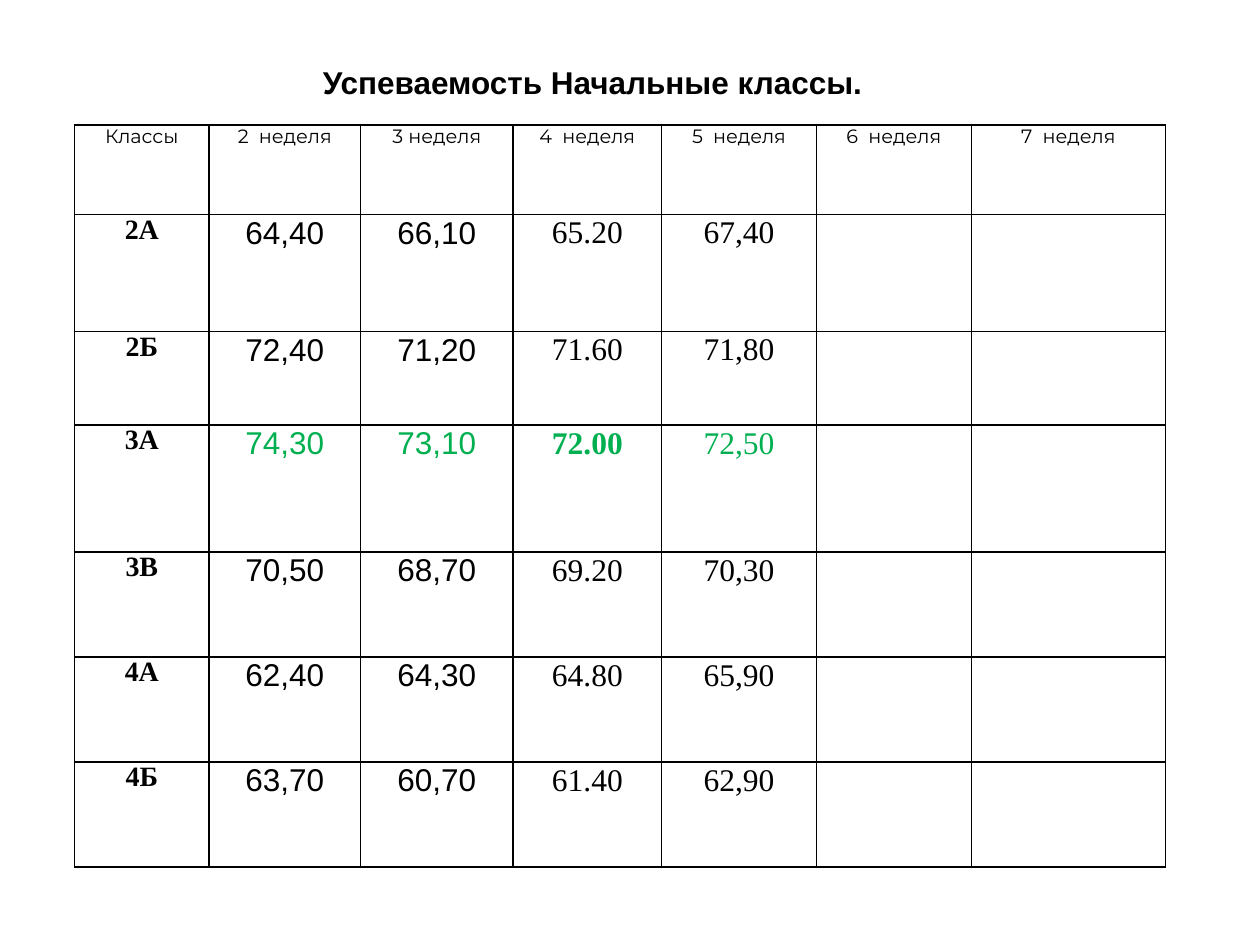
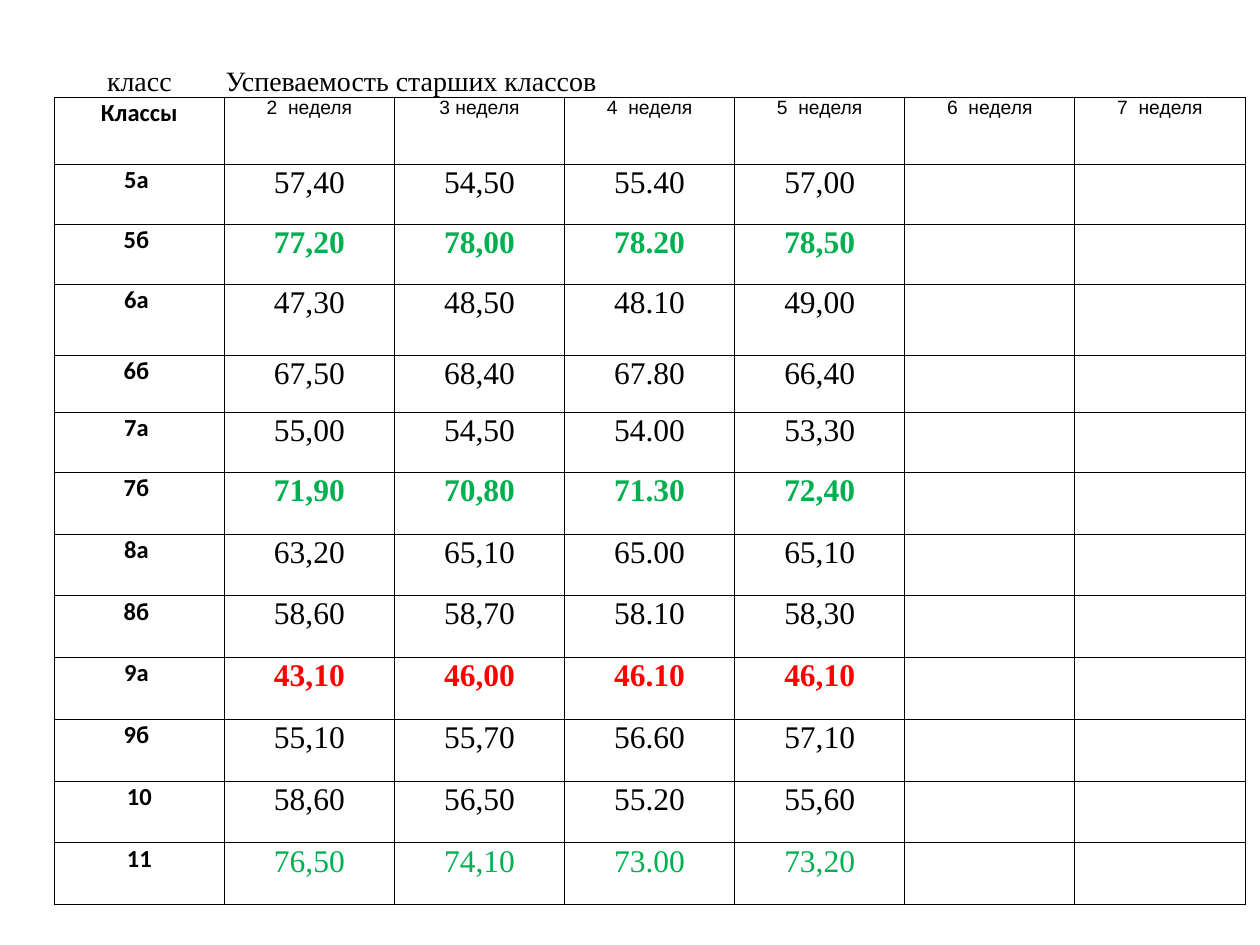
from dataclasses import dataclass

from lxml import etree
from pptx import Presentation
from pptx.dml.color import RGBColor
from pptx.enum.text import MSO_ANCHOR, MSO_AUTO_SIZE, PP_ALIGN
from pptx.oxml.ns import qn
from pptx.util import Pt

LEFT, MID = PP_ALIGN.LEFT, PP_ALIGN.CENTER
BASE, CORE = MSO_ANCHOR.BOTTOM, MSO_ANCHOR.MIDDLE
GROW = MSO_AUTO_SIZE.SHAPE_TO_FIT_TEXT


@dataclass(frozen=True)
class Theme:
    black: str = "000000"
    white: str = "FFFFFF"
    green: str = "00B050"
    red: str = "FF0000"
    sans: str = "Arial"
    serif: str = "Times New Roman"
    plain: str = "Calibri"
    round: str = "Montserrat"
    small: int = 11
    label: int = 14
    large: int = 16
    mark: int = 18


T = Theme()
SLIM = (0.7, 0.7, 0.7, 0)
WIDE = (5, 0, 5, 0)
SHIFT = (0.7, 0.7, 4, 0)
SIDES = ("L", "R", "T", "B")

WEEKS = ["2  неделя", "3 неделя", "4  неделя", "5  неделя", "6  неделя", "7  неделя"]

JUNIOR = [
    ("2А", "64,40 66,10 65.20 67,40"),
    ("2Б", "72,40 71,20 71.60 71,80"),
    ("3А", "74,30 73,10 72.00 72,50"),
    ("3В", "70,50 68,70 69.20 70,30"),
    ("4А", "62,40 64,30 64.80 65,90"),
    ("4Б", "63,70 60,70 61.40 62,90"),
]

SENIOR = [
    ("5а", "57,40 54,50 55.40 57,00"),
    ("5б", "77,20 78,00 78.20 78,50"),
    ("6а", "47,30 48,50 48.10 49,00"),
    ("6б", "67,50 68,40 67.80 66,40"),
    ("7а", "55,00 54,50 54.00 53,30"),
    ("7б", "71,90 70,80 71.30 72,40"),
    ("8а", "63,20 65,10 65.00 65,10"),
    ("8б", "58,60 58,70 58.10 58,30"),
    ("9а", "43,10 46,00 46.10 46,10"),
    ("9б", "55,10 55,70 56.60 57,10"),
    ("10", "58,60 56,50 55.20 55,60"),
    ("11", "76,50 74,10 73.00 73,20"),
]

TINTS = {"3А": T.green, "5б": T.green, "7б": T.green, "9а": T.red, "11": T.green}


def write(frame, text, font=T.serif, size=T.mark, color=T.black,
          bold=False, align=MID, gap=0):
    para = frame.paragraphs[0]
    para.alignment = align
    para.space_before = para.space_after = Pt(gap)
    run = para.add_run()
    run.text = text
    run.font.name = font
    run.font.size = Pt(size)
    run.font.bold = bold
    run.font.color.rgb = RGBColor.from_string(color)


def fill_cell(cell, text, inset=SLIM, **style):
    (cell.margin_left, cell.margin_top,
     cell.margin_right, cell.margin_bottom) = map(Pt, inset)
    write(cell.text_frame, text, **style)


def rule(cell, width, shown=SIDES):
    props = cell._tc.get_or_add_tcPr()
    for side in SIDES:
        line = etree.SubElement(props, qn(f"a:ln{side}"), w=str(Pt(width)))
        if side in shown:
            paint = etree.SubElement(line, qn("a:solidFill"))
            etree.SubElement(paint, qn("a:srgbClr"), val=T.black)
        else:
            etree.SubElement(line, qn("a:noFill"))


def add_grid(slide, left, top, cols, rows, line, head=0, solid=0):
    shape = slide.shapes.add_table(len(rows), len(cols), Pt(left), Pt(top),
                                   Pt(sum(cols)), Pt(sum(rows)))
    grid = shape.table
    grid.first_row = grid.horz_banding = False
    for col, width in zip(grid.columns, cols):
        col.width = Pt(width)
    for row, height in zip(grid.rows, rows):
        row.height = Pt(height)
    for r in range(len(rows)):
        for c in range(len(cols)):
            cell = grid.cell(r, c)
            rule(cell, line, SIDES if r >= head else ("B",))
            if r >= head and c < solid:
                cell.fill.solid()
                cell.fill.fore_color.rgb = RGBColor.from_string(T.white)
            else:
                cell.fill.background()
    return grid


def fill_weeks(grid, row, font):
    for c, week in enumerate(WEEKS, 1):
        fill_cell(grid.cell(row, c), week, WIDE, font=font, size=T.small, gap=3)


def fill_marks(grid, row, name, marks, fonts, bolds):
    for c, mark in enumerate(marks.split()):
        fill_cell(grid.cell(row, c + 1), mark, font=fonts[c], bold=bolds[c],
                  color=TINTS.get(name, T.black))


def add_title(slide, left, top, width, height, text):
    box = slide.shapes.add_textbox(Pt(left), Pt(top), Pt(width), Pt(height))
    frame = box.text_frame
    frame.word_wrap = False
    frame.auto_size = GROW
    frame.vertical_anchor = CORE
    write(frame, text, font=T.sans, bold=True)


def junior_slide(slide, left, top):
    cols = [76.9, 86.6, 87.1, 85, 88.4, 88.6, 110.8]
    rows = [51.1, 66.9, 53.4, 72.6] + [60] * 3
    grid = add_grid(slide, left, top, cols, rows, 1)
    fill_cell(grid.cell(0, 0), "Классы", WIDE, font=T.round, size=T.small, gap=3)
    fill_weeks(grid, 0, T.round)
    fonts = [T.sans] * 2 + [T.serif] * 2
    for r, (name, marks) in enumerate(JUNIOR, 1):
        fill_cell(grid.cell(r, 0), name, WIDE, size=T.large, bold=True, gap=3)
        bolds = [name == "3А" and c == 2 for c in range(4)]
        fill_marks(grid, r, name, marks, fonts, bolds)
    add_title(slide, left + 133, top - 39, 326, 29,
              "Успеваемость Начальные классы.")


def senior_slide(slide, left, top):
    rows = [35, 38.4, 34.2, 34.2, 40.8, 32.5, 34.2] + [35.3] * 7
    grid = add_grid(slide, left, top, [97.2] * 7, rows, 0.5, head=1, solid=5)
    grid.cell(0, 1).merge(grid.cell(0, 3))
    heads = [("класс", MID), ("Успеваемость старших классов", LEFT)]
    for c, (text, align) in enumerate(heads):
        cell = grid.cell(0, c)
        cell.vertical_anchor = BASE
        fill_cell(cell, text, size=T.large, align=align)
    fill_cell(grid.cell(1, 0), "Классы", font=T.plain, size=T.label, bold=True)
    fill_weeks(grid, 1, T.sans)
    for r, (name, marks) in enumerate(SENIOR, 2):
        inset = SLIM if name.isdigit() else SHIFT
        fill_cell(grid.cell(r, 0), name, inset, font=T.plain,
                  size=T.label, bold=True)
        bold = name in TINTS and name != "11"
        fill_marks(grid, r, name, marks, [T.serif] * 4, [bold] * 4)


def main():
    deck = Presentation()
    deck.slide_width, deck.slide_height = Pt(720), Pt(540)
    blank = deck.slide_layouts[6]
    junior_slide(deck.slides.add_slide(blank), 42.6, 71.4)
    senior_slide(deck.slides.add_slide(blank), 31, 20.6)
    deck.save("out.pptx")


if __name__ == "__main__":
    main()
